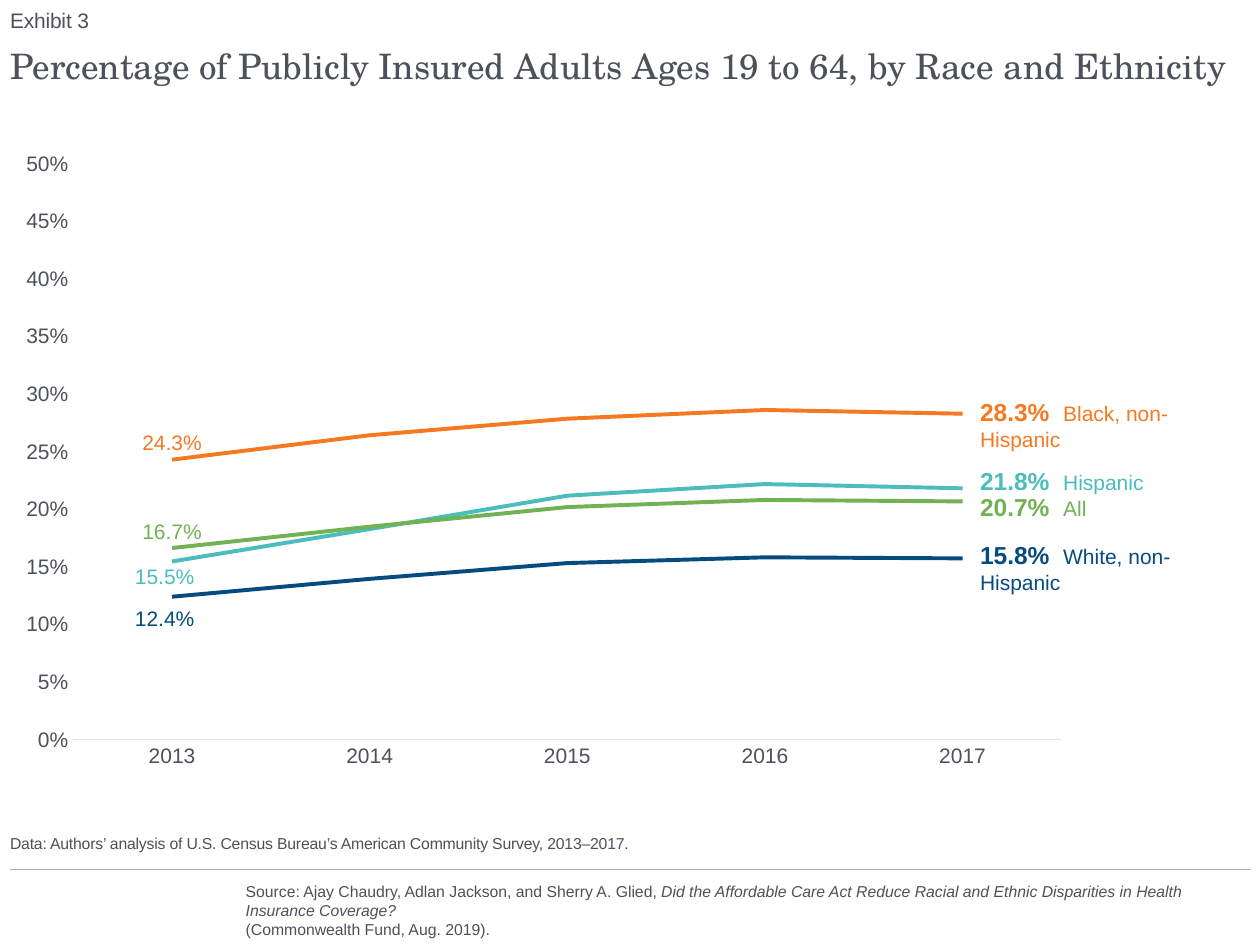
"""Build the exhibit slide on publicly insured adults by race and ethnicity."""
import pptx
import pptx.chart.data
import pptx.dml.color
import pptx.enum.chart
import pptx.enum.shapes
import pptx.enum.text
import pptx.oxml
import pptx.oxml.ns
import pptx.util
from lxml import etree

Inches, Pt = pptx.util.Inches, pptx.util.Pt
RGBColor = pptx.dml.color.RGBColor
Anchor = pptx.enum.text.MSO_ANCHOR
LabelPos = pptx.enum.chart.XL_LABEL_POSITION
qn = pptx.oxml.ns.qn

GRAY = RGBColor(0x4C, 0x51, 0x5A)
RULE = RGBColor(0xAB, 0xAB, 0xAB)
AXIS = RGBColor(0xE3, 0xE5, 0xE7)
NAVY = RGBColor(0x04, 0x4C, 0x7F)
ORANGE = RGBColor(0xF4, 0x79, 0x20)
TEAL = RGBColor(0x4A, 0xBD, 0xBC)
GREEN = RGBColor(0x71, 0xB2, 0x54)

LEFT, WIDTH = 0.08, 9.84
LABEL_LEFT, LABEL_HEIGHT, LABEL_TAB = 7.68, 0.34, 0.66
PLOT = {"x": 0.051, "y": 0.03, "w": 0.797, "h": 0.909}

EXHIBIT = "Exhibit 3"
TITLE = "Percentage of Publicly Insured Adults Ages 19 to 64, by Race and Ethnicity"
DATA_NOTE = ("Data: Authors’ analysis of U.S. Census Bureau’s American Community Survey, "
             "2013–2017.")
SOURCE = [
    ("Source: Ajay Chaudry, Adlan Jackson, and Sherry A. Glied, ", {}),
    ("Did the Affordable Care Act Reduce Racial and Ethnic Disparities in Health "
     "Insurance Coverage?", {"italic": True}),
    ("\n", {}),
    ("(Commonwealth Fund, Aug. 2019).", {}),
]
YEARS = ["2013", "2014", "2015", "2016", "2017"]
GROUPS = [
    {"name": "White, non-Hispanic", "color": NAVY, "top": 4.24, "width": 2.17,
     "values": [0.1242, 0.1397, 0.1534, 0.1584, 0.1575],
     "pos": LabelPos.BELOW, "shift": (-0.006, 0.01)},
    {"name": "Black, non-Hispanic", "color": ORANGE, "top": 3.1, "width": 2.17,
     "values": [0.2432, 0.2644, 0.2788, 0.2863, 0.2831],
     "pos": LabelPos.ABOVE, "shift": None},
    {"name": "Hispanic", "color": TEAL, "top": 3.65, "width": 1.77,
     "values": [0.1548, 0.1829, 0.2119, 0.222, 0.2183],
     "pos": LabelPos.BELOW, "shift": (-0.006, 0)},
    {"name": "All", "color": GREEN, "top": 3.86, "width": 2.17,
     "values": [0.1665, 0.185, 0.202, 0.2082, 0.2069],
     "pos": LabelPos.ABOVE, "shift": None},
]


def style(font, size, color, name="Arial", bold=False, italic=False):
    font.name, font.size, font.bold, font.italic = name, Pt(size), bold, italic
    font.color.rgb = color


def add_text(s, runs, box, size=9, color=GRAY, font="Arial", anchor=Anchor.TOP,
             inset=0, spacing=None, tracking=None, tab=None):
    sp = s.shapes.add_textbox(*map(Inches, box))
    tf = sp.text_frame
    tf.word_wrap, tf.vertical_anchor = True, anchor
    if inset is not None:
        tf.margin_left = tf.margin_right = tf.margin_top = tf.margin_bottom = Inches(inset)
    p = tf.paragraphs[0]
    if tab:
        tabs = etree.SubElement(p._p.get_or_add_pPr(), qn("a:tabLst"))
        etree.SubElement(tabs, qn("a:tab"), pos=str(Inches(tab)), algn="l")
    if spacing:
        p.line_spacing = spacing
    for text, extra in [(runs, {})] if isinstance(runs, str) else runs:
        if text == "\n":
            p.add_line_break()
            continue
        r = p.add_run()
        r.text = text
        style(r.font, **{"size": size, "color": color, "name": font, **extra})
        if tracking:
            r.font._element.set("spc", str(round(tracking * 100)))
    return sp


def manual_layout(values, inner=False):
    layout = etree.Element(qn("c:layout"))
    manual = etree.SubElement(layout, qn("c:manualLayout"))
    if inner:
        etree.SubElement(manual, qn("c:layoutTarget"), val="inner")
        for key in "xy":
            etree.SubElement(manual, qn(f"c:{key}Mode"), val="edge")
    for key, value in values.items():
        etree.SubElement(manual, qn(f"c:{key}"), val=str(value))
    return layout


def add_line_chart(s):
    data = pptx.chart.data.CategoryChartData(number_format="0.0%")
    data.categories = YEARS
    for group in GROUPS:
        data.add_series(group["name"], group["values"])
    chart = s.shapes.add_chart(pptx.enum.chart.XL_CHART_TYPE.LINE, Inches(LEFT), Inches(1.15),
                               Inches(WIDTH), Inches(5.03), data).chart
    chart.has_legend = chart.has_title = False
    style(chart.font, 10, GRAY)
    chart.plots[0].vary_by_categories = False

    area = chart._chartSpace.chart.plotArea
    for old in area.findall(qn("c:layout")):
        area.remove(old)
    area.insert(0, manual_layout(PLOT, inner=True))

    cat, val = chart.category_axis, chart.value_axis
    for axis in (cat, val):
        axis.has_major_gridlines = False
        axis.major_tick_mark = axis.minor_tick_mark = pptx.enum.chart.XL_TICK_MARK.NONE
        style(axis.tick_labels.font, 12, GRAY)
    cat.format.line.color.rgb = AXIS
    cat.format.line.width = Pt(0.75)
    val.format.line.fill.background()
    val.minimum_scale, val.maximum_scale, val.major_unit = 0, 0.5, 0.05
    val.tick_labels.number_format = "0%"
    val.tick_labels.number_format_is_linked = False

    for series, group in zip(chart.plots[0].series, GROUPS):
        series.smooth = False
        series.marker.style = pptx.enum.chart.XL_MARKER_STYLE.NONE
        series.format.line.color.rgb = group["color"]
        series.format.line.width = Pt(2.25)
        label = series.points[0].data_label
        style(label.font, 12, group["color"])
        label.position = group["pos"]
        if group["shift"]:
            idx = series._element.find(".//" + qn("c:dLbl") + "/" + qn("c:idx"))
            idx.addnext(manual_layout(dict(zip("xy", group["shift"]))))


def add_rule(s, y):
    line = s.shapes.add_connector(pptx.enum.shapes.MSO_CONNECTOR.STRAIGHT, Inches(LEFT),
                                  Inches(y), Inches(LEFT + WIDTH), Inches(y))
    line.line.color.rgb = RULE
    line.line.width = Pt(0.75)
    etree.SubElement(line._element.spPr, qn("a:effectLst"))


def main():
    prs = pptx.Presentation()
    prs.slide_width, prs.slide_height = Inches(10), Inches(7.5)
    s = prs.slides.add_slide(prs.slide_layouts[6])
    add_text(s, SOURCE, (1.95, 7, 8, 0.45), anchor=Anchor.MIDDLE)
    add_rule(s, 6.9)
    add_text(s, TITLE, (LEFT, 0.32, WIDTH, 0.83), size=20, font="TeX Gyre Schola", spacing=1.1)
    add_line_chart(s)
    add_text(s, EXHIBIT, (LEFT, 0.01, WIDTH, 0.25), size=12, anchor=Anchor.BOTTOM, tracking=-0.1)
    add_text(s, DATA_NOTE, (LEFT, 6.23, WIDTH, 0.54), anchor=Anchor.BOTTOM, tracking=-0.1)
    for group in GROUPS:
        runs = [(f"{group['values'][-1]:.1%}\t", {"size": 14, "bold": True}), (group["name"], {})]
        add_text(s, runs, (LABEL_LEFT, group["top"], group["width"], LABEL_HEIGHT), size=12,
                 color=group["color"], inset=None, tab=LABEL_TAB)
    prs.save("out.pptx")


if __name__ == "__main__":
    main()
